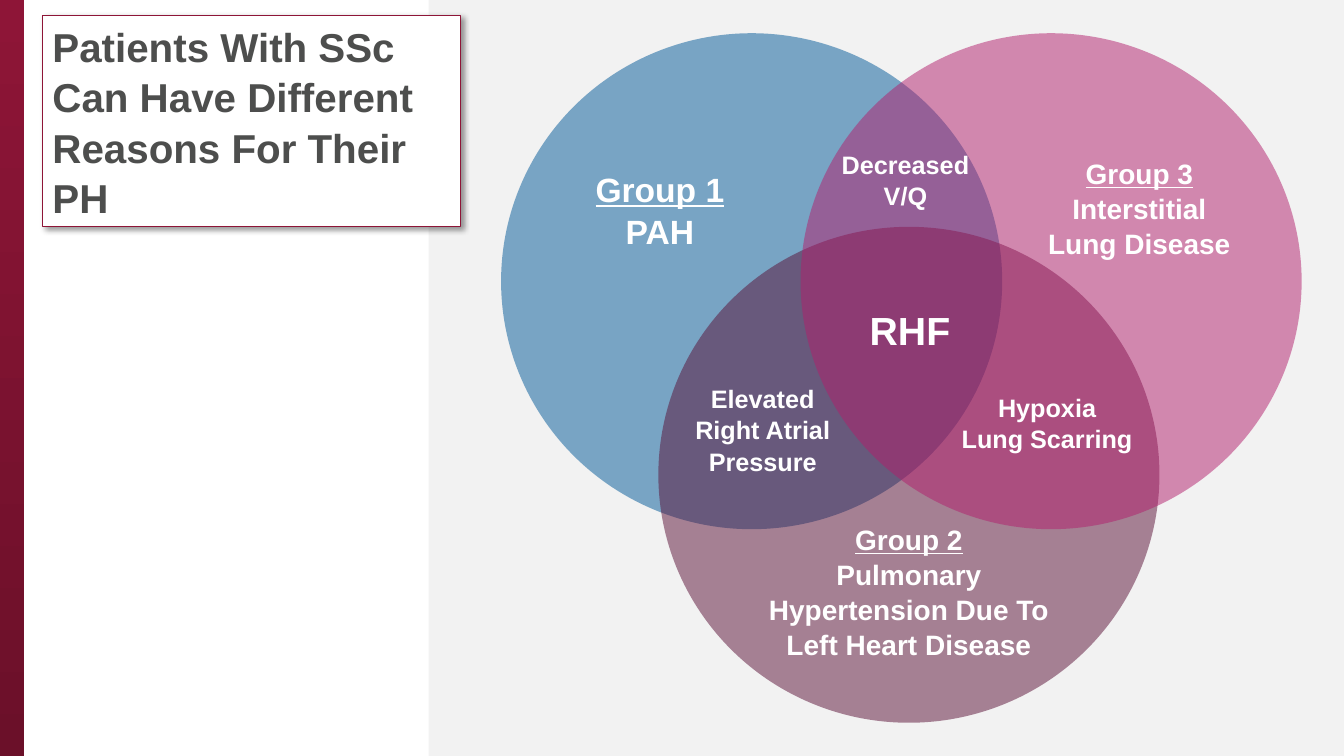
from lxml import etree
from pptx import Presentation
from pptx.dml.color import RGBColor
from pptx.enum.shapes import MSO_SHAPE as Shape
from pptx.enum.text import MSO_ANCHOR as Anchor, MSO_AUTO_SIZE as AutoSize, PP_ALIGN as Align
from pptx.oxml import parse_xml
from pptx.oxml.ns import nsdecls, qn
from pptx.util import Inches, Pt

COLORS = {
    "white": "FFFFFF", "panel": "F2F2F2", "title": "4D4E4D",
    "crimson": "8E1537", "maroon": "6B1029",
    "blue": "005897", "plum": "590F36", "pink": "B21E6C",
}
FONT = "Arial"
LINE_SPACING = 1.04
DIAMETER = (4.97, 4.92)


def color(name):
    return RGBColor.from_string(COLORS[name])


def style_text(para, size, name):
    para.line_spacing = LINE_SPACING
    for span in para.runs:
        span.font.name = FONT
        span.font.size = Pt(size)
        span.font.bold = True
        span.font.color.rgb = color(name)


deck = Presentation()
deck.slide_width = Inches(13.33)
deck.slide_height = Inches(7.5)
page = deck.slides.add_slide(deck.slide_layouts[5])

side_bar = page.shapes.add_shape(Shape.RECTANGLE, 0, 0, Inches(0.24), Inches(7.5))
side_bar.fill.gradient()
side_bar.fill.gradient_angle = 270
for stop, name in zip(side_bar.fill.gradient_stops, ("crimson", "maroon")):
    stop.color.rgb = color(name)

panel = page.shapes.add_shape(Shape.RECTANGLE, Inches(4.25), 0, Inches(9.08), Inches(7.5))
panel.fill.solid()
panel.fill.fore_color.rgb = color("panel")

title = page.shapes.title
for backdrop in (side_bar, panel):
    backdrop.line.fill.background()
    backdrop.shadow.inherit = False
    title.element.addprevious(backdrop.element)

title.left, title.top = Inches(0.42), Inches(0.15)
title.width, title.height = Inches(4.15), Inches(2.1)
title.fill.solid()
title.fill.fore_color.rgb = color("white")
title.line.color.rgb = color("crimson")
title.line.width = Pt(0.75)
title.element.spPr.append(parse_xml(
    f'<a:effectLst {nsdecls("a")}>'
    f'<a:outerShdw blurRad="{Pt(4)}" dist="{Pt(3)}" dir="2700000" algn="tl" rotWithShape="0">'
    '<a:srgbClr val="000000"><a:alpha val="40000"/></a:srgbClr>'
    '</a:outerShdw></a:effectLst>'))
title.text_frame.text = "Patients With SSc Can Have Different Reasons For Their PH"
title.text_frame.word_wrap = True
title.text_frame.auto_size = AutoSize.NONE
title.text_frame.vertical_anchor = Anchor.MIDDLE
title_para = title.text_frame.paragraphs[0]
title_para.alignment = Align.LEFT
style_text(title_para, 28.8, "title")

venn = page.shapes.add_group_shape()
circles = [
    (4.97, 0.33, "blue"),
    (6.53, 2.25, "plum"),
    (7.94, 0.33, "pink"),
]
for left, top, name in circles:
    circle = venn.shapes.add_shape(Shape.OVAL, *map(Inches, (left, top, *DIAMETER)))
    circle.fill.solid()
    circle.fill.fore_color.rgb = color(name)
    circle.line.fill.background()
    circle.shadow.inherit = False
    fill_color = circle.element.spPr.find(qn("a:solidFill"))[0]
    etree.SubElement(fill_color, qn("a:alpha")).set("val", "50000")

labels = [
    (5.8, 1.61, 1.49, 0.91, 24, False, "Group 1\nPAH"),
    (10.19, 1.49, 2.22, 1.11, 20, True, "Group 3\nInterstitial\nLung Disease"),
    (7.31, 5.12, 3.41, 1.45, 20, True,
     "Group 2\nPulmonary Hypertension Due To Left Heart Disease"),
    (8.52, 2.97, 1.01, 0.57, 28, False, "RHF"),
    (6.73, 3.74, 1.67, 1.01, 18, True, "Elevated\nRight Atrial\nPressure"),
    (9.43, 3.83, 1.91, 0.71, 18, True, "Hypoxia\nLung Scarring"),
    (8.24, 1.42, 1.48, 0.71, 18, False, "Decreased\nV/Q"),
]
for left, top, width, height, size, wraps, text in labels:
    box = venn.shapes.add_textbox(*map(Inches, (left, top, width, height)))
    frame = box.text_frame
    frame.text = text
    frame.word_wrap = wraps
    frame.auto_size = AutoSize.SHAPE_TO_FIT_TEXT
    for para in frame.paragraphs:
        para.alignment = Align.CENTER
        style_text(para, size, "white")
        if para.text.startswith("Group"):
            para.runs[0].font.underline = True

deck.save("out.pptx")
